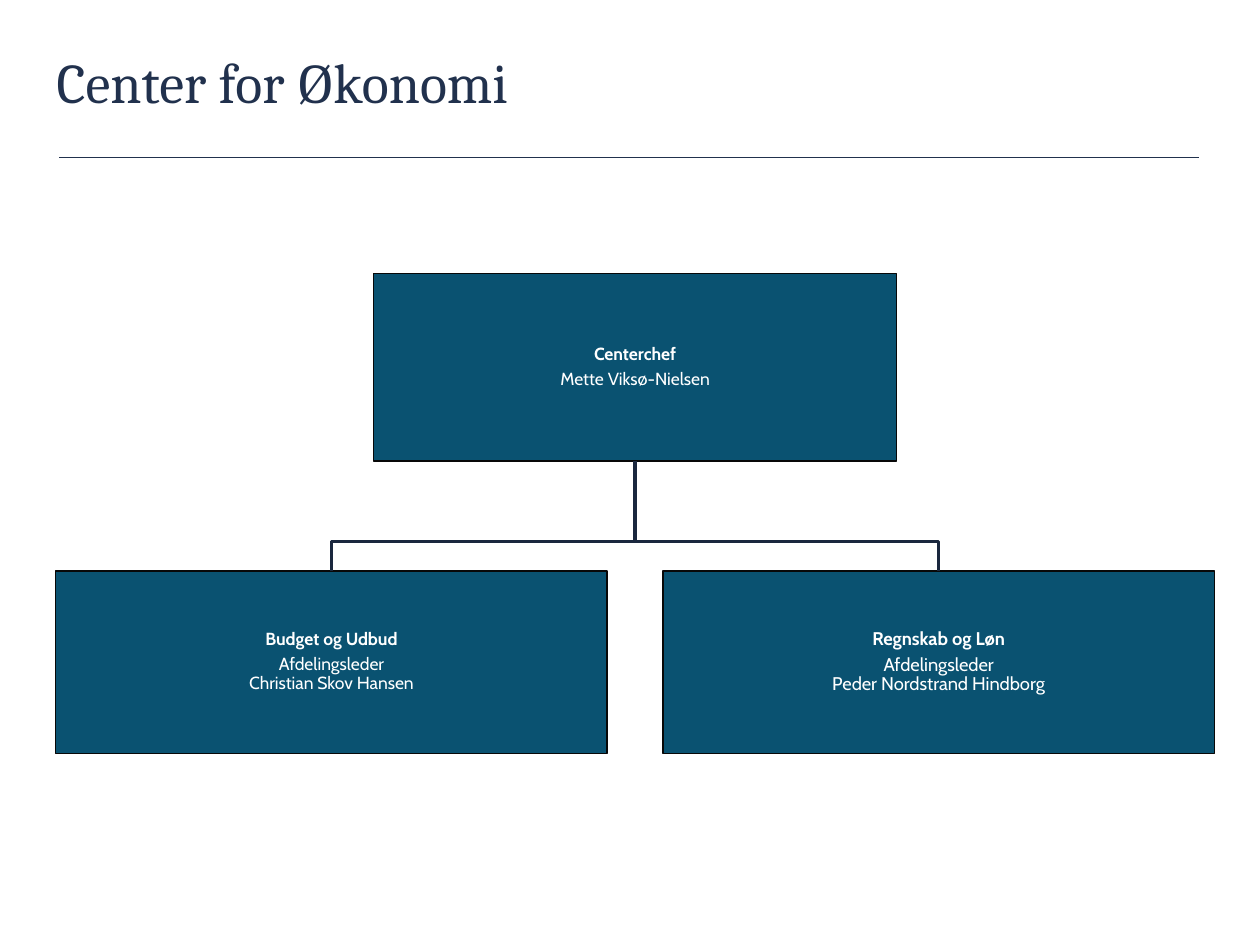
from dataclasses import dataclass

from lxml import etree
from pptx import Presentation
from pptx.dml.color import RGBColor
from pptx.enum.shapes import MSO_CONNECTOR, MSO_SHAPE
from pptx.enum.text import MSO_ANCHOR, PP_ALIGN
from pptx.oxml.ns import qn
from pptx.util import Inches, Pt


@dataclass(frozen=True)
class Theme:
    navy: RGBColor = RGBColor.from_string("21314D")
    branch: RGBColor = RGBColor.from_string("1A273E")
    teal: RGBColor = RGBColor.from_string("0A5271")
    border: RGBColor = RGBColor.from_string("080808")
    white: RGBColor = RGBColor.from_string("FFFFFF")
    title_font: str = "Cambria"
    body_font: str = "Cabin"
    title_size: float = 32
    body_size: float = 10
    large_body_size: float = 10.5


THEME = Theme()


def set_font(paragraph, name, size, color, bold=False):
    font = paragraph.font
    font.name, font.size, font.bold = name, Pt(size), bold
    font.color.rgb = color


def set_margins(text_frame, margin):
    text_frame.margin_left = text_frame.margin_right = margin
    text_frame.margin_top = text_frame.margin_bottom = margin


def add_header(slide, left, top, width, height):
    """Place the title with a rule just below its box."""
    title = slide.shapes.add_textbox(left, top, width, height)
    text_frame = title.text_frame
    text_frame.word_wrap = True
    set_margins(text_frame, 0)
    paragraph = text_frame.paragraphs[0]
    paragraph.text = "Center for Økonomi"
    set_font(paragraph, THEME.title_font, THEME.title_size, THEME.navy)

    rule_left, rule_top = left + Inches(0.02), top + height + Inches(0.02)
    rule = slide.shapes.add_connector(
        MSO_CONNECTOR.STRAIGHT, rule_left, rule_top, left + width, rule_top)
    rule.line.color.rgb = THEME.navy
    rule.line.width = Pt(0.75)
    etree.SubElement(rule._element.spPr, qn("a:effectLst"))


def add_unit(slide, left, top, width, height, heading, details, size):
    unit = slide.shapes.add_shape(MSO_SHAPE.RECTANGLE, left, top, width, height)
    unit.shadow.inherit = False
    unit.fill.solid()
    unit.fill.fore_color.rgb = THEME.teal
    unit.line.color.rgb = THEME.border
    unit.line.width = Pt(1)

    text_frame = unit.text_frame
    text_frame.word_wrap = True
    text_frame.vertical_anchor = MSO_ANCHOR.MIDDLE
    set_margins(text_frame, Inches(0.01))
    text_frame.text = f"{heading}\n{details}"
    for index, paragraph in enumerate(text_frame.paragraphs):
        paragraph.alignment = PP_ALIGN.CENTER
        paragraph.line_spacing = 0.9
        paragraph.space_after = Pt(3.5)
        set_font(paragraph, THEME.body_font, size, THEME.white, bold=index == 0)
    return unit


def add_branch(slide, parent, child):
    """Draw the stepped line from the parent's bottom to the child's top."""
    start_x, start_y = parent.left + parent.width // 2, parent.top + parent.height
    end_x, end_y = child.left + child.width // 2, child.top
    bend_y = end_y - Inches(0.23)
    builder = slide.shapes.build_freeform(start_x, start_y)
    builder.add_line_segments(
        [(start_x, bend_y), (end_x, bend_y), (end_x, end_y)], close=False)
    branch = builder.convert_to_shape()
    branch.shadow.inherit = False
    branch.fill.background()
    branch.line.color.rgb = THEME.branch
    branch.line.width = Pt(2)


def add_organisation(slide, left, top, width, height):
    """Place the head above two departments that span the full width."""
    head_width, head_height = Inches(4.15), Inches(1.49)
    unit_width, unit_height = Inches(4.38), Inches(1.45)
    head = add_unit(
        slide, left + (width - head_width) // 2, top, head_width, head_height,
        "Centerchef", "Mette Viksø-Nielsen", THEME.body_size)

    departments = [
        ("Budget og Udbud", "Afdelingsleder\vChristian Skov Hansen",
         THEME.body_size),
        ("Regnskab og Løn", "Afdelingsleder\vPeder Nordstrand Hindborg",
         THEME.large_body_size),
    ]
    for index, (heading, details, size) in enumerate(departments):
        unit = add_unit(
            slide, left + index * (width - unit_width),
            top + height - unit_height, unit_width, unit_height,
            heading, details, size)
        add_branch(slide, head, unit)


def main():
    presentation = Presentation()
    presentation.slide_width = Inches(10)
    presentation.slide_height = Inches(7.5)
    slide = presentation.slides.add_slide(presentation.slide_layouts[6])
    add_header(slide, Inches(0.45), Inches(0.38), Inches(9.07), Inches(0.85))
    add_organisation(slide, Inches(0.44), Inches(2.17), Inches(9.2), Inches(3.81))
    presentation.save("out.pptx")


if __name__ == "__main__":
    main()
